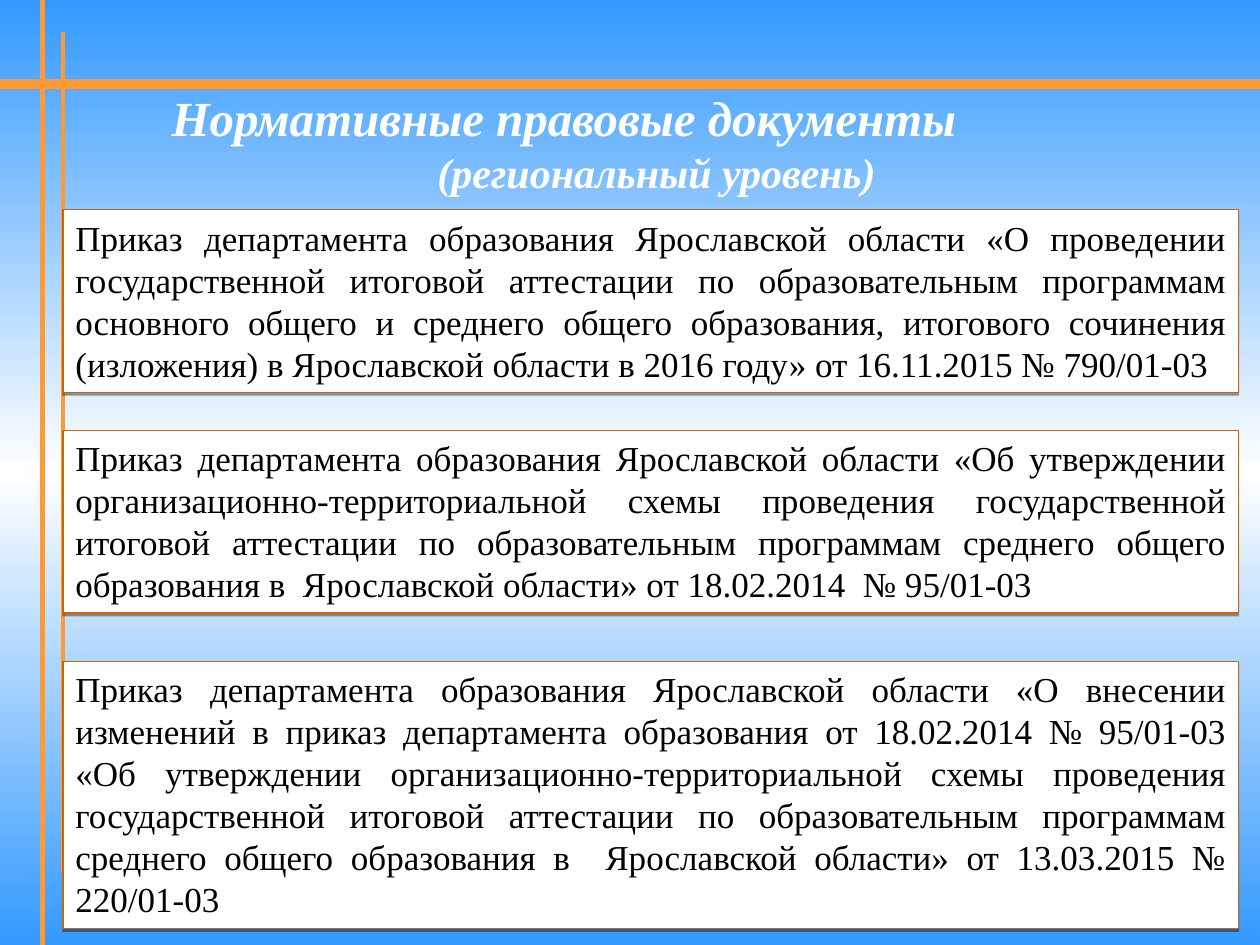
from copy import deepcopy

from lxml.etree import SubElement
from pptx import Presentation
from pptx.dml.color import RGBColor
from pptx.enum.shapes import MSO_CONNECTOR, MSO_SHAPE
from pptx.enum.text import MSO_ANCHOR, PP_ALIGN
from pptx.oxml.ns import qn
from pptx.util import Cm, Pt

WHITE = RGBColor(0xFF, 0xFF, 0xFF)
BLACK = RGBColor(0, 0, 0)
BLUE = RGBColor(0x33, 0x99, 0xFF)
ORANGE = RGBColor(0xFF, 0x99, 0x33)
BROWN = RGBColor(0xCC, 0x66, 0x00)
FONT = "Times New Roman"

WIDTH, HEIGHT = 25.4, 19.05
ORDER_LEFT, ORDER_WIDTH = 1.27, 23.7

HEADING = [
    ("Нормативные правовые документы", 28, PP_ALIGN.LEFT, 1.71),
    ("(региональный уровень)", 24, PP_ALIGN.CENTER, 0),
]
RULES = [
    ((0, 1.69), (WIDTH, 1.69), 6),
    ((0.85, 0), (0.85, HEIGHT), 3),
    ((1.27, 0.64), (1.27, 17.57), 2.25),
]
ORDERS = [
    (4.23, 3.68,
     "Приказ департамента образования Ярославской области «О проведении "
     "государственной итоговой аттестации по образовательным программам "
     "основного общего и среднего общего образования, итогового сочинения "
     "(изложения) в Ярославской области в 2016 году» от 16.11.2015 № 790/01-03"),
    (8.68, 3.68,
     "Приказ департамента образования Ярославской области «Об утверждении "
     "организационно-территориальной схемы проведения государственной "
     "итоговой аттестации по образовательным программам среднего общего "
     "образования в  Ярославской области» от 18.02.2014  № 95/01-03"),
    (13.33, 5.39,
     "Приказ департамента образования Ярославской области «О внесении "
     "изменений в приказ департамента образования от 18.02.2014 № 95/01-03 "
     "«Об утверждении организационно-территориальной схемы проведения "
     "государственной итоговой аттестации по образовательным программам "
     "среднего общего образования в  Ярославской области» от 13.03.2015 № "
     "220/01-03"),
]


def paint_background(slide):
    fill = slide.background.fill
    fill.gradient()
    fill.gradient_angle = 90
    stop_list = slide.element.find(".//" + qn("a:gsLst"))
    stop_list.insert(1, deepcopy(stop_list[0]))
    for stop, position, color in zip(fill.gradient_stops, (0, 0.5, 1), (BLUE, WHITE, BLUE)):
        stop.position = position
        stop.color.rgb = color


def add_rule(slide, start, end, weight):
    rule = slide.shapes.add_connector(
        MSO_CONNECTOR.STRAIGHT, *(Cm(value) for value in start + end))
    rule.line.color.rgb = ORANGE
    rule.line.width = Pt(weight)
    SubElement(rule.element.spPr, qn("a:effectLst"))


def add_drop_shadow(shape):
    shape.shadow.inherit = False
    effects = shape.element.spPr.find(qn("a:effectLst"))
    shadow = SubElement(effects, qn("a:outerShdw"), blurRad="0", dist=str(Pt(1.6)),
                        dir="5400000", rotWithShape="0")
    color = SubElement(shadow, qn("a:srgbClr"), val=str(BLACK))
    SubElement(color, qn("a:alpha"), val="38000")


def add_order(slide, top, height, wording):
    order = slide.shapes.add_shape(
        MSO_SHAPE.RECTANGLE, Cm(ORDER_LEFT), Cm(top), Cm(ORDER_WIDTH), Cm(height))
    order.fill.solid()
    order.fill.fore_color.rgb = WHITE
    order.line.color.rgb = BROWN
    order.line.width = Pt(0.75)
    add_drop_shadow(order)
    frame = order.text_frame
    frame.word_wrap = True
    frame.vertical_anchor = MSO_ANCHOR.TOP
    paragraph = frame.paragraphs[0]
    paragraph.text = wording
    paragraph.alignment = PP_ALIGN.JUSTIFY
    style_font(paragraph.font, 20, BLACK)


def style_font(font, size, color):
    font.name = FONT
    font.size = Pt(size)
    font.color.rgb = color


def add_heading(slide):
    heading = slide.shapes.add_textbox(Cm(1.5), Cm(1.7), Cm(23.47), Cm(2.34))
    frame = heading.text_frame
    frame.word_wrap = True
    frame.vertical_anchor = MSO_ANCHOR.MIDDLE
    for index, (wording, size, alignment, indent) in enumerate(HEADING):
        paragraph = frame.add_paragraph() if index else frame.paragraphs[0]
        paragraph.text = wording
        paragraph.alignment = alignment
        paragraph._p.get_or_add_pPr().set("marL", str(Cm(indent)))
        style_font(paragraph.font, size, WHITE)
        paragraph.font.bold = True
        paragraph.font.italic = True


def main():
    presentation = Presentation()
    presentation.slide_width = Cm(WIDTH)
    presentation.slide_height = Cm(HEIGHT)
    slide = presentation.slides.add_slide(presentation.slide_layouts[6])
    paint_background(slide)
    for rule in RULES:
        add_rule(slide, *rule)
    add_heading(slide)
    for order in ORDERS:
        add_order(slide, *order)
    presentation.save("out.pptx")


if __name__ == "__main__":
    main()
